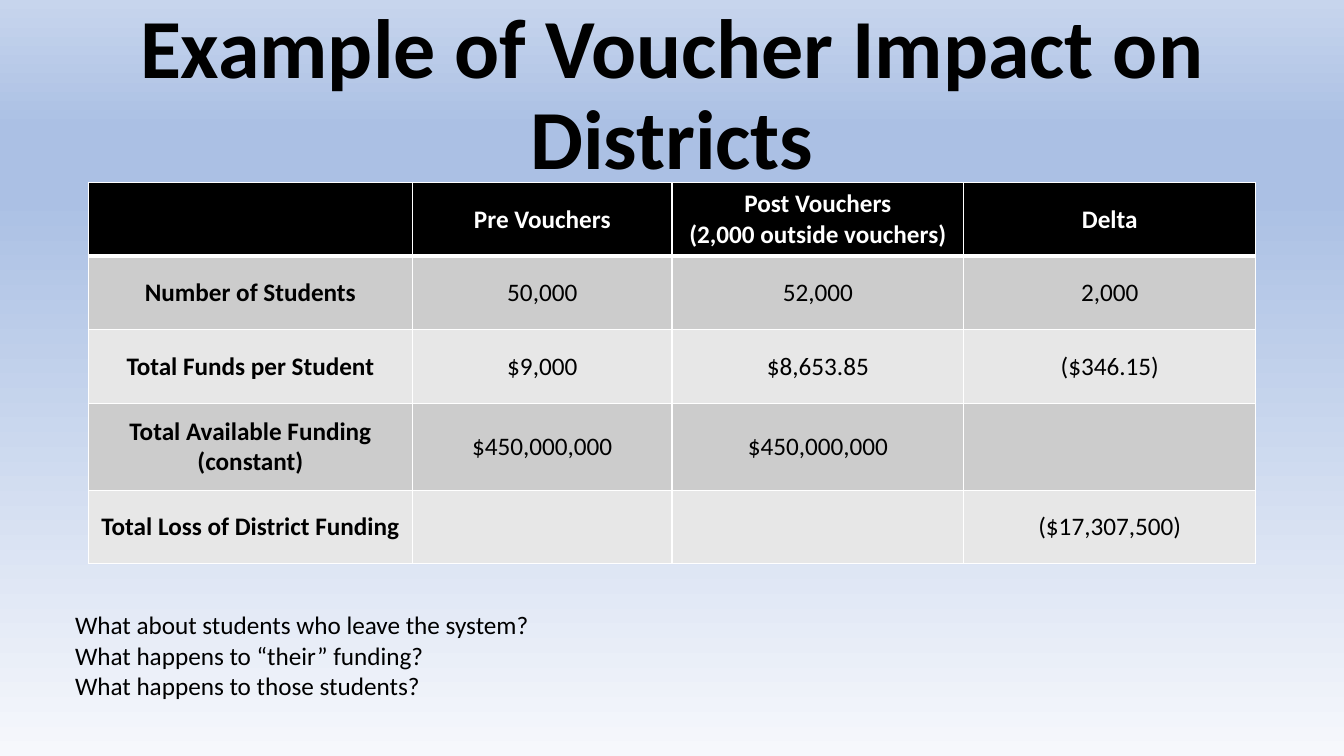
from lxml import etree
from pptx import Presentation
from pptx import util as u
from pptx.dml.color import RGBColor
from pptx.enum import text
from pptx.oxml.ns import qn

PX = 9525  # EMU per pixel, 96 pixels to the inch
COLORS = {
    "black": "000000", "white": "FFFFFF",
    "dark_band": "CCCCCC", "light_band": "E7E7E7",
    "pale": "F6F8FC", "blue": "ABC0E4", "sky": "C7D5ED",
}


def write_text(frame, content, size=18, color="black", bold=False,
               align=text.PP_ALIGN.CENTER, spacing=1.0):
    for index, line in enumerate(content.split("\n")):
        paragraph = frame.paragraphs[0] if index == 0 else frame.add_paragraph()
        paragraph.alignment = align
        paragraph.line_spacing = spacing
        paragraph.space_before = u.Pt(0)
        run = paragraph.add_run()
        run.text = line
        run.font.name = "Calibri"
        run.font.size = u.Pt(size)
        run.font.bold = bold
        run.font.color.rgb = RGBColor.from_string(COLORS[color])


def add_border(cell, side, width):
    properties = cell._tc.get_or_add_tcPr()
    line = etree.SubElement(properties, qn(f"a:ln{side}"), w=str(u.Pt(width)))
    fill = etree.SubElement(line, qn("a:solidFill"))
    etree.SubElement(fill, qn("a:srgbClr"), val=COLORS["white"])


presentation = Presentation()
presentation.slide_width = 1280 * PX
presentation.slide_height = 720 * PX
slide = presentation.slides.add_slide(presentation.slide_layouts[0])
subtitle = slide.placeholders[1].element
subtitle.getparent().remove(subtitle)

# Background gradient, running from bottom to top
background = slide.background.fill
background.gradient()
background.gradient_angle = 90
stops = slide.element.find(".//" + qn("a:gsLst"))
for stop in list(stops):
    stops.remove(stop)
for percent, color in ((0, "pale"), (74, "blue"), (83, "blue"), (100, "sky")):
    stop = etree.SubElement(stops, qn("a:gs"), pos=str(percent * 1000))
    etree.SubElement(stop, qn("a:srgbClr"), val=COLORS[color])

# Title
title = slide.shapes.title
title.left, title.top, title.width, title.height = 0, 11 * PX, 1280 * PX, 163 * PX
title.text_frame.word_wrap = True
title.text_frame.auto_size = text.MSO_AUTO_SIZE.NONE
title.text_frame.vertical_anchor = text.MSO_ANCHOR.MIDDLE
write_text(title.text_frame, "Example of Voucher Impact on Districts",
           size=60, bold=True, spacing=0.9)

# Funding table
rows = [
    ("", "Pre Vouchers", "Post Vouchers\n(2,000 outside vouchers)", "Delta"),
    ("Number of Students", "50,000", "52,000", "2,000"),
    ("Total Funds per Student", "$9,000", "$8,653.85", "($346.15)"),
    ("Total Available Funding (constant)", "$450,000,000", "$450,000,000", ""),
    ("Total Loss of District Funding", "", "", "($17,307,500)"),
]
column_widths = [309, 247, 278, 278]
row_heights = [70, 70, 70, 83, 70]
table = slide.shapes.add_table(
    len(rows), len(column_widths), 84 * PX, 174 * PX,
    sum(column_widths) * PX, sum(row_heights) * PX).table
for column, width in zip(table.columns, column_widths):
    column.width = width * PX
for row_index, values in enumerate(rows):
    table.rows[row_index].height = row_heights[row_index] * PX
    header = row_index == 0
    band = "black" if header else ("light_band", "dark_band")[row_index % 2]
    for column_index, value in enumerate(values):
        cell = table.cell(row_index, column_index)
        cell.vertical_anchor = text.MSO_ANCHOR.MIDDLE
        # A thick rule separates the header from the first data row
        for side in "LRTB":
            thick = (row_index, side) in ((0, "B"), (1, "T"))
            add_border(cell, side, 3 if thick else 1)
        cell.fill.solid()
        cell.fill.fore_color.rgb = RGBColor.from_string(COLORS[band])
        if value:
            write_text(cell.text_frame, value, bold=header or column_index == 0,
                       color="white" if header else "black")

# Open questions
questions = slide.shapes.add_textbox(62 * PX, 576 * PX, 805 * PX, 126 * PX)
questions.text_frame.word_wrap = True
write_text(questions.text_frame,
           "What about students who leave the system?\n"
           "What happens to “their” funding?\n"
           "What happens to those students?",
           align=text.PP_ALIGN.LEFT)

presentation.save("out.pptx")
